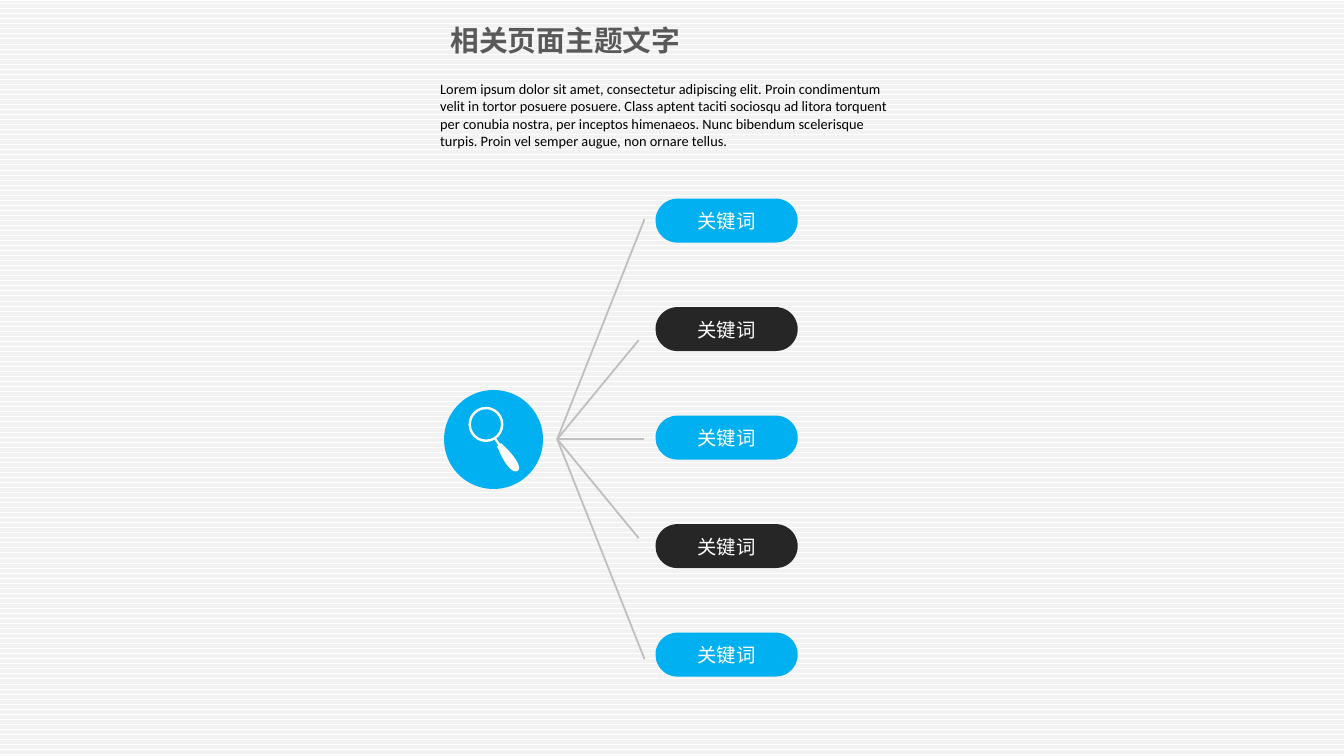
import pptx
import pptx.dml.color
import pptx.enum.dml
import pptx.enum.shapes
import pptx.enum.text
import pptx.oxml.ns
import pptx.util
import lxml.etree

Pt = pptx.util.Pt
Kind = pptx.enum.shapes.MSO_SHAPE
Align = pptx.enum.text.PP_ALIGN
BLUE, DARK, GREY, WHITE = "00B0F0", "262626", "BFBFBF", "FFFFFF"
LOREM = (
    "Lorem ipsum dolor sit amet, consectetur adipiscing elit. "
    "Proin condimentum velit in tortor posuere posuere. "
    "Class aptent taciti sociosqu ad litora torquent per conubia nostra, "
    "per inceptos himenaeos. Nunc bibendum scelerisque turpis. "
    "Proin vel semper augue, non ornare tellus."
)


def color(code):
    return pptx.dml.color.RGBColor.from_string(code)


def paint(shape, fill):
    shape.shadow.inherit = False
    shape.line.fill.background()
    shape.fill.solid()
    shape.fill.fore_color.rgb = color(fill)


def add_form(shapes, kind, box, fill, adjust=None):
    shape = shapes.add_shape(kind, *map(Pt, box))
    paint(shape, fill)
    if adjust is not None:
        shape.adjustments[0] = adjust
    return shape


def add_text(shapes, text, box, size, font, ink, bold=False,
             align=Align.LEFT, pitch=None, inset=None):
    """Add a text box; pitch is the line spacing in points."""
    frame = shapes.add_textbox(*map(Pt, box)).text_frame
    frame.word_wrap = True
    frame.auto_size = pptx.enum.text.MSO_AUTO_SIZE.SHAPE_TO_FIT_TEXT
    if inset is not None:
        frame.margin_left = frame.margin_right = Pt(inset)
        frame.margin_top = frame.margin_bottom = Pt(inset)
    line = frame.paragraphs[0]
    line.alignment = align
    if pitch:
        line.line_spacing = Pt(pitch)
    run = line.add_run()
    run.text = text
    run.font.size, run.font.bold, run.font.name = Pt(size), bold, font
    run.font.color.rgb = color(ink)
    east = lxml.etree.SubElement(run.font._element, pptx.oxml.ns.qn("a:ea"))
    east.set("typeface", font)


def add_ray(shapes, start, end):
    ray = shapes.add_connector(pptx.enum.shapes.MSO_CONNECTOR.STRAIGHT,
                               *map(Pt, start + end))
    ray.line.color.rgb = color(GREY)
    ray.line.width = Pt(2)
    lxml.etree.SubElement(ray._element.spPr, pptx.oxml.ns.qn("a:effectLst"))


def add_stripes(shapes):
    back = add_form(shapes, Kind.RECTANGLE, (-2.88, 0, 1499.76, 853.92), WHITE)
    back.fill.patterned()
    back.fill.pattern = pptx.enum.dml.MSO_PATTERN.NARROW_HORIZONTAL
    back.fill.fore_color.rgb = color("F2F2F2")
    back.fill.back_color.rgb = color(WHITE)


def add_fan(shapes):
    hub_x, hub_y = 620.6, 488.9
    for reach, rise in ((97.2, 244.8), (97.2, -244.8), (90.7, 110.2),
                        (90.7, -110.2), (97.2, 0)):
        add_ray(shapes, (hub_x, hub_y), (hub_x + reach, hub_y + rise))


def add_pill(shapes, top, fill):
    add_form(shapes, Kind.ROUNDED_RECTANGLE, (730.1, top, 158.4, 49), fill, 0.5)
    add_text(shapes, "关键词", (748.1, top + 8.2, 122.4, 33.1), 21.6, "Arial",
             WHITE, align=Align.CENTER, pitch=25.9)


def bend(a, b, c, d, steps=12):
    """Return points along a cubic curve, without its start."""
    points = []
    for step in range(1, steps + 1):
        t = step / steps
        u = 1 - t
        points.append(tuple(
            u**3 * p + 3 * u * u * t * q + 3 * u * t * t * r + t**3 * s
            for p, q, r, s in zip(a, b, c, d)))
    return points


def add_lens(shapes):
    add_form(shapes, Kind.OVAL, (494.6, 434.2, 110.2, 110.2), BLUE)
    add_form(shapes, Kind.DONUT, (521.8, 452.9, 38.9, 39.2), WHITE, 0.07)
    neck, tip, base, back = (558, 493.2), (578.2, 522), (573.8, 524.9), (553.7, 496.8)
    edge = [(553, 488.2), (557.3, 494.6), neck]
    edge += bend(neck, (573.8, 507.6), (578.9, 517.7), tip)
    edge += bend(tip, (577.4, 524.2), (575.3, 524.9), base)
    edge += bend(base, (564.5, 522.7), (556.6, 504), back)
    edge += [(555.1, 496.1), (550.8, 489.6)]
    spots = [(Pt(x), Pt(y)) for x, y in edge]
    form = shapes.build_freeform(*spots[0])
    form.add_line_segments(spots[1:], close=True)
    paint(form.convert_to_shape(), WHITE)


def main():
    deck = pptx.Presentation()
    deck.slide_width, deck.slide_height = Pt(1496.88), Pt(841.68)
    shapes = deck.slides.add_slide(deck.slide_layouts[6]).shapes
    add_stripes(shapes)
    add_text(shapes, "相关页面主题文字", (494.6, 21.6, 338.4, 46.1), 32,
             "Noto Sans CJK SC", "595959", bold=True, pitch=38.4)
    add_fan(shapes.add_group_shape().shapes)
    add_text(shapes, LOREM, (490.3, 89.3, 516.2, 77.8), 16, "Calibri",
             "000000", inset=0)
    for row in range(5):
        add_pill(shapes.add_group_shape().shapes, 221.1 + 120.8 * row,
                 DARK if row % 2 else BLUE)
    add_lens(shapes.add_group_shape().shapes)
    deck.save("out.pptx")


if __name__ == "__main__":
    main()
